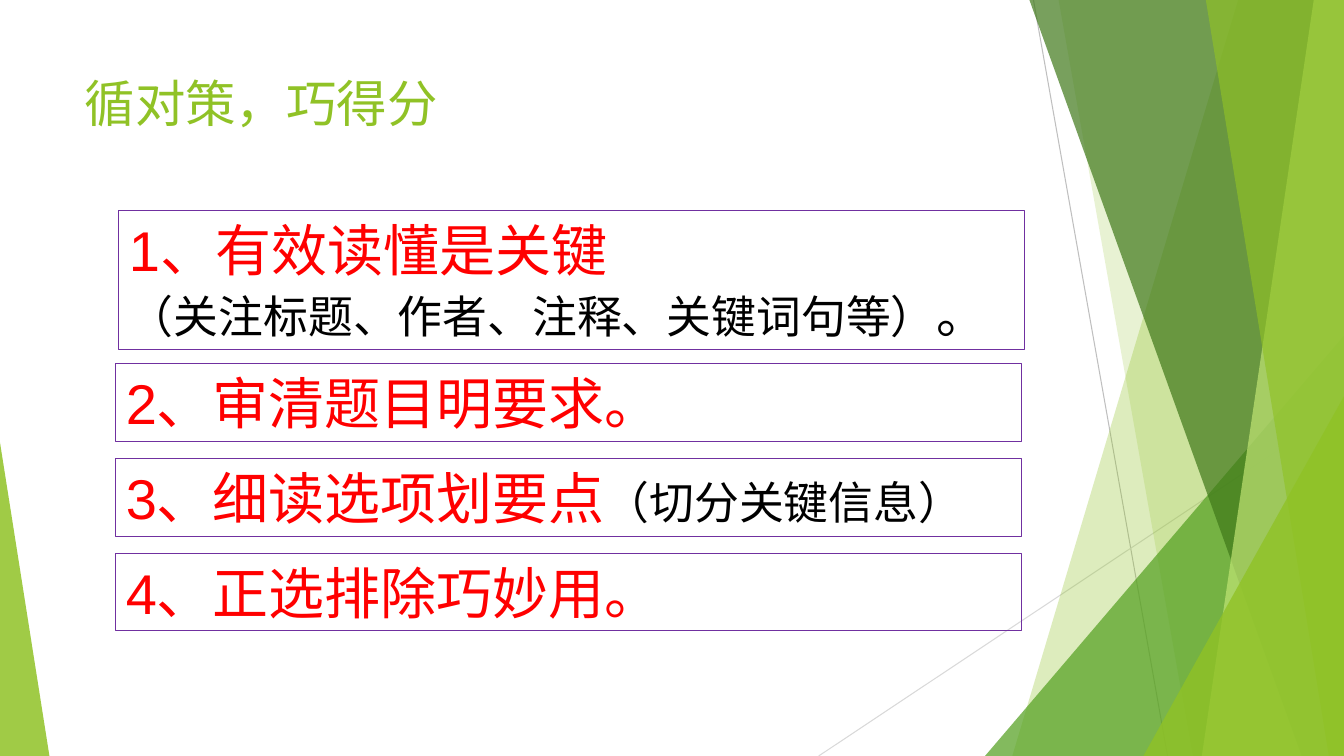
import pptx
import pptx.dml.color
import pptx.enum.shapes
import pptx.enum.text
import pptx.oxml
import pptx.oxml.ns
import pptx.util

Inches = pptx.util.Inches
RGBColor = pptx.dml.color.RGBColor
SHAPES = pptx.enum.shapes.MSO_SHAPE

LIME = RGBColor(0x90, 0xC2, 0x26)
GREEN = RGBColor(0x54, 0xA0, 0x21)
FOREST = RGBColor(0x3F, 0x78, 0x19)
PALE_LIME = RGBColor(0xC0, 0xE4, 0x74)
GRAY = RGBColor(0xBF, 0xBF, 0xBF)
LIGHT_GRAY = RGBColor(0xD9, 0xD9, 0xD9)
PURPLE = RGBColor(0x70, 0x30, 0xA0)
RED = RGBColor(0xFF, 0x00, 0x00)
BLACK = RGBColor(0x00, 0x00, 0x00)

WIDTH, HEIGHT = 13.33, 7.5
CJK_FONT = "Noto Sans CJK SC"


def add_text(paragraph, text, size, color, font="Arial"):
    run = paragraph.add_run()
    run.text = text
    run.font.size = pptx.util.Pt(size)
    run.font.color.rgb = color
    run.font.name = font
    east_asian = pptx.oxml.parse_xml(
        f'<a:ea {pptx.oxml.ns.nsdecls("a")} typeface="{CJK_FONT}"/>')
    run.font._element.find(pptx.oxml.ns.qn("a:latin")).addnext(east_asian)


def fill_facet(facet, color, opacity):
    """Fill a borderless shape; opacity is a percentage."""
    facet.shadow.inherit = False
    facet.line.fill.background()
    facet.fill.solid()
    facet.fill.fore_color.rgb = color
    color_element = facet._element.spPr.find(".//" + pptx.oxml.ns.qn("a:srgbClr"))
    color_element.append(pptx.oxml.parse_xml(
        f'<a:alpha {pptx.oxml.ns.nsdecls("a")} val="{opacity * 1000}"/>'))


def add_ray(slide, start, end, color):
    ray = slide.shapes.add_connector(
        pptx.enum.shapes.MSO_CONNECTOR.STRAIGHT,
        *(Inches(value) for value in (*start, *end)))
    ray.line.color.rgb = color
    ray.line.width = pptx.util.Pt(0.75)
    ray._element.spPr.append(
        pptx.oxml.parse_xml(f'<a:effectLst {pptx.oxml.ns.nsdecls("a")}/>'))


def add_band(slide, top_x, bottom_x, color, opacity):
    """Add a full-height band from a slanted left edge to the slide's right edge."""
    builder = slide.shapes.build_freeform(Inches(top_x), 0)
    builder.add_line_segments(
        [(Inches(x), Inches(y)) for x, y in
         ((WIDTH, 0), (WIDTH, HEIGHT), (bottom_x, HEIGHT))], close=True)
    fill_facet(builder.convert_to_shape(), color, opacity)


def add_corner(slide, left, top, width, apex, color, opacity):
    """Add a triangle standing on the slide's bottom; apex is 0 (left) to 1 (right)."""
    corner = slide.shapes.add_shape(
        SHAPES.ISOSCELES_TRIANGLE, Inches(left), Inches(top),
        Inches(width), Inches(HEIGHT - top))
    corner.adjustments[0] = apex
    fill_facet(corner, color, opacity)


def add_decoration(slide):
    add_ray(slide, (10.25, 0), (11.58, HEIGHT), GRAY)
    add_ray(slide, (WIDTH, 4.03), (8.12, HEIGHT), LIGHT_GRAY)
    add_band(slide, 12.28, 10.04, LIME, 30)
    add_band(slide, 10.5, 11.83, LIME, 20)
    add_corner(slide, 9.77, 3.33, 3.56, 1, GREEN, 72)
    add_band(slide, 10.21, 12.91, FOREST, 70)
    add_band(slide, 13.03, 11.92, PALE_LIME, 70)
    add_band(slide, 11.96, 13.18, LIME, 65)
    add_corner(slide, 11.34, 3.93, 1.99, 1, LIME, 80)
    add_corner(slide, 0, 4.39, 0.49, 0, LIME, 85)


def add_title(slide, text, left, top, width, height):
    title = slide.shapes.title
    title.left, title.top = Inches(left), Inches(top)
    title.width, title.height = Inches(width), Inches(height)
    title.text_frame.vertical_anchor = pptx.enum.text.MSO_ANCHOR.TOP
    paragraph = title.text_frame.paragraphs[0]
    paragraph.alignment = pptx.enum.text.PP_ALIGN.LEFT
    add_text(paragraph, text, size=36, color=LIME, font=CJK_FONT)


def add_strategy(slide, lines, left, top, height, width=8.98):
    """Add an outlined box; each line is a list of (text, size, color) runs."""
    box = slide.shapes.add_shape(
        SHAPES.RECTANGLE, Inches(left), Inches(top), Inches(width), Inches(height))
    box.shadow.inherit = False
    box.fill.background()
    box.line.color.rgb = PURPLE
    box.line.width = pptx.util.Pt(0.75)
    frame = box.text_frame
    frame.word_wrap = True
    frame.auto_size = pptx.enum.text.MSO_AUTO_SIZE.SHAPE_TO_FIT_TEXT
    frame.vertical_anchor = pptx.enum.text.MSO_ANCHOR.TOP
    for index, line in enumerate(lines):
        paragraph = frame.add_paragraph() if index else frame.paragraphs[0]
        paragraph.alignment = pptx.enum.text.PP_ALIGN.LEFT
        for text, size, color in line:
            add_text(paragraph, text, size=size, color=color)


def add_strategies(slide, left, top):
    add_strategy(slide, [
        [("1、有效读懂是关键", 40, RED)],
        [("（关注标题、作者、注释、关键词句等）", 32, BLACK), ("。", 36, BLACK)],
    ], left + 0.03, top, 1.38)
    single_lines = [
        [("2、审清题目明要求。", 40, RED)],
        [("3、细读选项划要点", 40, RED), ("（切分关键信息）", 32, BLACK)],
        [("4、正选排除巧妙用。", 40, RED)],
    ]
    for index, line in enumerate(single_lines):
        add_strategy(slide, [line], left, top + 1.52 + 0.94 * index, 0.77)


def main():
    deck = pptx.Presentation()
    deck.slide_width, deck.slide_height = Inches(WIDTH), Inches(HEIGHT)
    slide = deck.slides.add_slide(deck.slide_layouts.get_by_name("Title Only"))
    add_decoration(slide)
    add_title(slide, "循对策，巧得分", 0.74, 0.67, 9.4, 1.44)
    add_strategies(slide, 1.15, 2.09)
    deck.save("out.pptx")


if __name__ == "__main__":
    main()
